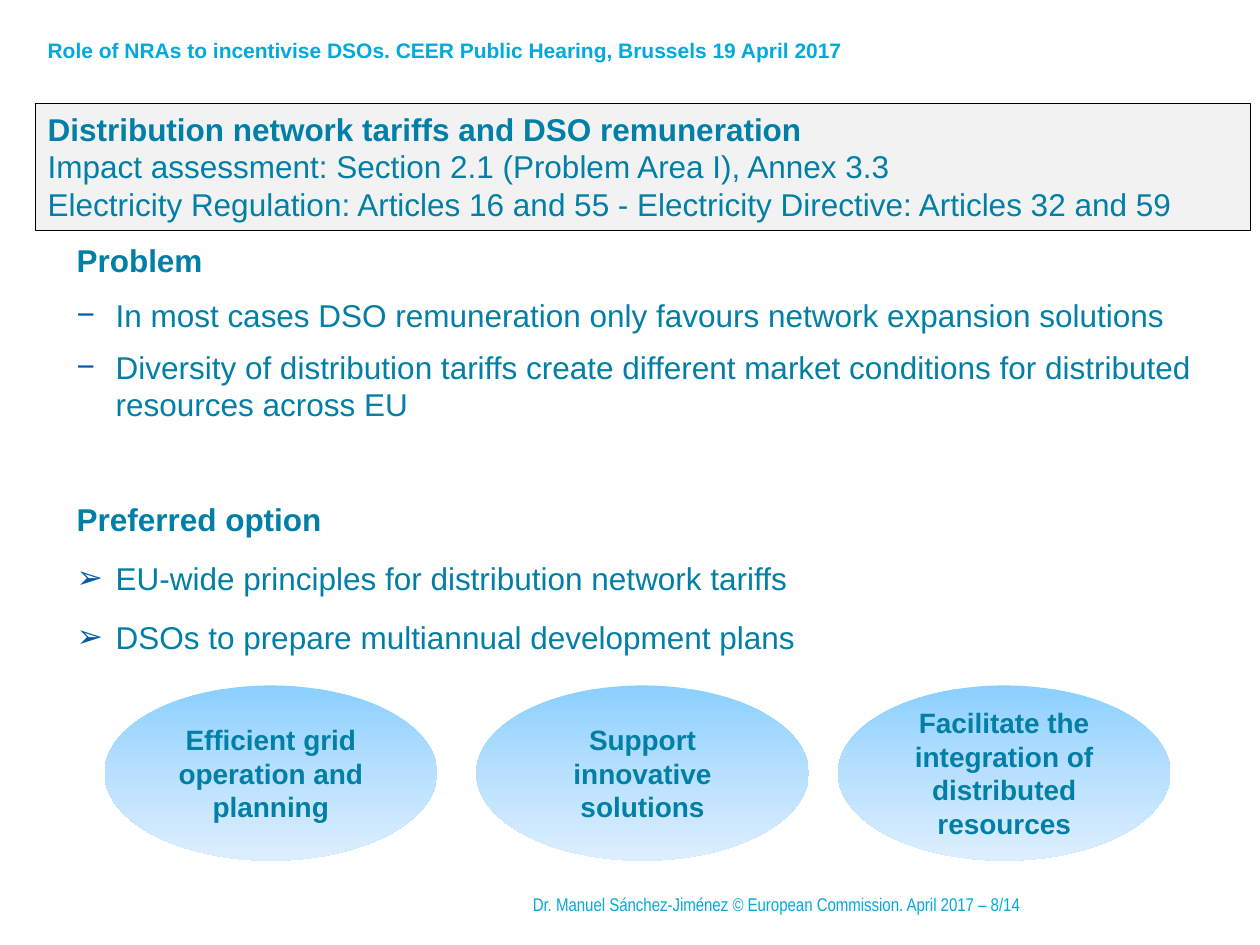
from lxml.etree import SubElement
from copy import deepcopy
from pptx import Presentation
from pptx.dml.color import RGBColor
from pptx.enum.shapes import MSO_SHAPE as Shape
from pptx.enum.text import MSO_ANCHOR as Anchor, PP_ALIGN as Align
from pptx.oxml.ns import qn
from pptx.util import Inches, Pt

SKY, TEAL, BULLET_BLUE = "03A9DD", "027FA6", "005BAB"
GRADIENT = [(0, "8AD0FF"), (0.5, "B8E0FE"), (1, "DDEFFE")]


def color(value):
    return RGBColor.from_string(value)


class SlideBuilder:
    def __init__(self, slide):
        self.slide = slide

    def style(self, paragraph, size, ink=TEAL, bold=False, name="Arial"):
        font = paragraph.font
        font.size, font.bold, font.name = Pt(size), bold, name
        font.color.rgb = color(ink)

    def text_box(self, bounds, anchor=Anchor.TOP):
        frame = self.slide.shapes.add_textbox(*map(Inches, bounds)).text_frame
        frame.word_wrap = True
        frame.vertical_anchor = anchor
        return frame

    def label(self, bounds, text, size, anchor=Anchor.TOP, **look):
        paragraph = self.text_box(bounds, anchor).paragraphs[0]
        paragraph.text = text
        self.style(paragraph, size, SKY, **look)

    def shape(self, kind, bounds):
        shape = self.slide.shapes.add_shape(kind, *map(Inches, bounds))
        shape.shadow.inherit = False
        shape.text_frame.word_wrap = True
        return shape

    def banner(self, bounds, lines):
        shape = self.shape(Shape.RECTANGLE, bounds)
        shape.fill.solid()
        shape.fill.fore_color.rgb = color("F2F2F2")
        shape.line.color.rgb = color("000000")
        shape.line.width = Pt(0.25)
        frame = shape.text_frame
        frame.vertical_anchor = Anchor.TOP
        frame.text = "\n".join(lines)
        for index, paragraph in enumerate(frame.paragraphs):
            paragraph.alignment = Align.LEFT
            self.style(paragraph, 18, bold=index == 0)

    def bullet(self, paragraph, mark):
        properties = paragraph._p.get_or_add_pPr()
        properties.set("marL", str(Inches(0.31)))
        properties.set("indent", str(-Inches(0.31)))
        bullet_color = SubElement(properties, qn("a:buClr"))
        SubElement(bullet_color, qn("a:srgbClr"), val=BULLET_BLUE)
        SubElement(properties, qn("a:buFont"), typeface="Arial")
        SubElement(properties, qn("a:buChar"), char=mark)

    def outline(self, bounds, items):
        frame = self.text_box(bounds)
        frame.text = "\n".join(text for text, *_ in items)
        for paragraph, (_, mark, before, after) in zip(frame.paragraphs, items):
            paragraph.space_before, paragraph.space_after = Pt(before), Pt(after)
            if mark:
                self.bullet(paragraph, mark)
            self.style(paragraph, 18, bold=not mark)

    def ellipse(self, bounds, text):
        shape = self.shape(Shape.OVAL, bounds)
        shape.line.fill.background()
        shape.fill.gradient()
        shape.fill.gradient_angle = 270
        stop_list = shape._element.spPr.find(".//" + qn("a:gsLst"))
        stop_list.append(deepcopy(stop_list[0]))
        for stop, (position, value) in zip(shape.fill.gradient_stops, GRADIENT):
            stop.position = position
            stop.color.rgb = color(value)
        shape.text_frame.vertical_anchor = Anchor.MIDDLE
        paragraph = shape.text_frame.paragraphs[0]
        paragraph.text = text
        paragraph.alignment = Align.CENTER
        self.style(paragraph, 16, bold=True)


def main():
    presentation = Presentation()
    presentation.slide_width, presentation.slide_height = Inches(10), Inches(7.5)
    builder = SlideBuilder(presentation.slides.add_slide(presentation.slide_layouts[6]))

    builder.label((0.28, 0.25, 9.13, 0.3),
                  "Role of NRAs to incentivise DSOs. CEER Public Hearing, Brussels 19 April 2017",
                  12, bold=True)
    builder.label((4.13, 6.98, 4.25, 0.4),
                  "Dr. Manuel Sánchez-Jiménez © European Commission. April 2017 – 8/14",
                  10.5, Anchor.MIDDLE, name="Arial Narrow")
    builder.banner((0.28, 0.82, 9.64, 1.01), [
        "Distribution network tariffs and DSO remuneration",
        "Impact assessment: Section 2.1 (Problem Area I), Annex 3.3",
        "Electricity Regulation: Articles 16 and 55 - Electricity Directive: Articles 32 and 59",
    ])
    builder.outline((0.51, 1.86, 9.4, 3.42), [
        ("Problem", None, 0, 6),
        ("In most cases DSO remuneration only favours network expansion solutions", "−", 4, 4),
        ("Diversity of distribution tariffs create different market conditions "
         "for distributed resources across EU", "−", 4, 4),
        ("Preferred option", None, 40, 6),
        ("EU-wide principles for distribution network tariffs", "➢", 6, 6),
        ("DSOs to prepare multiannual development plans", "➢", 6, 6),
    ])
    for left, text in [
        (0.83, "Efficient grid operation and planning"),
        (3.78, "Support innovative solutions"),
        (6.65, "Facilitate the integration of distributed resources"),
    ]:
        builder.ellipse((left, 5.44, 2.64, 1.39), text)

    presentation.save("out.pptx")


if __name__ == "__main__":
    main()
